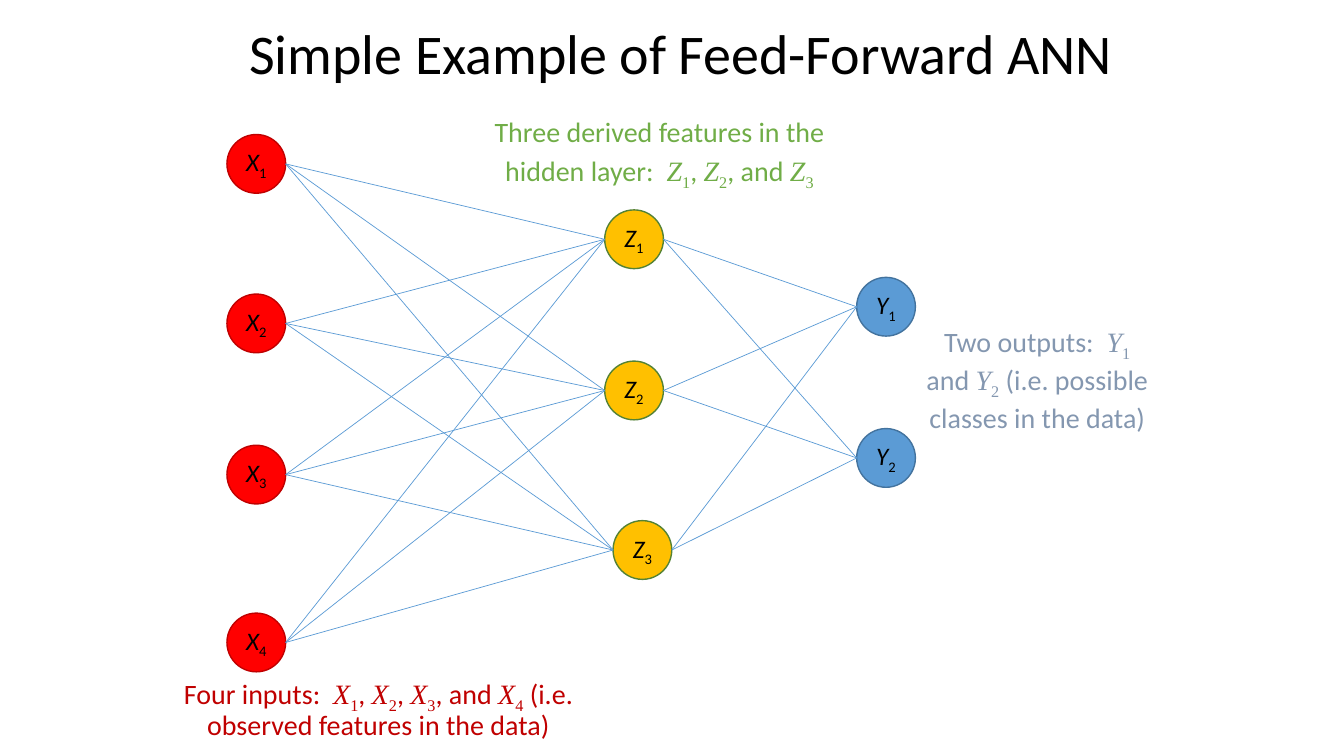
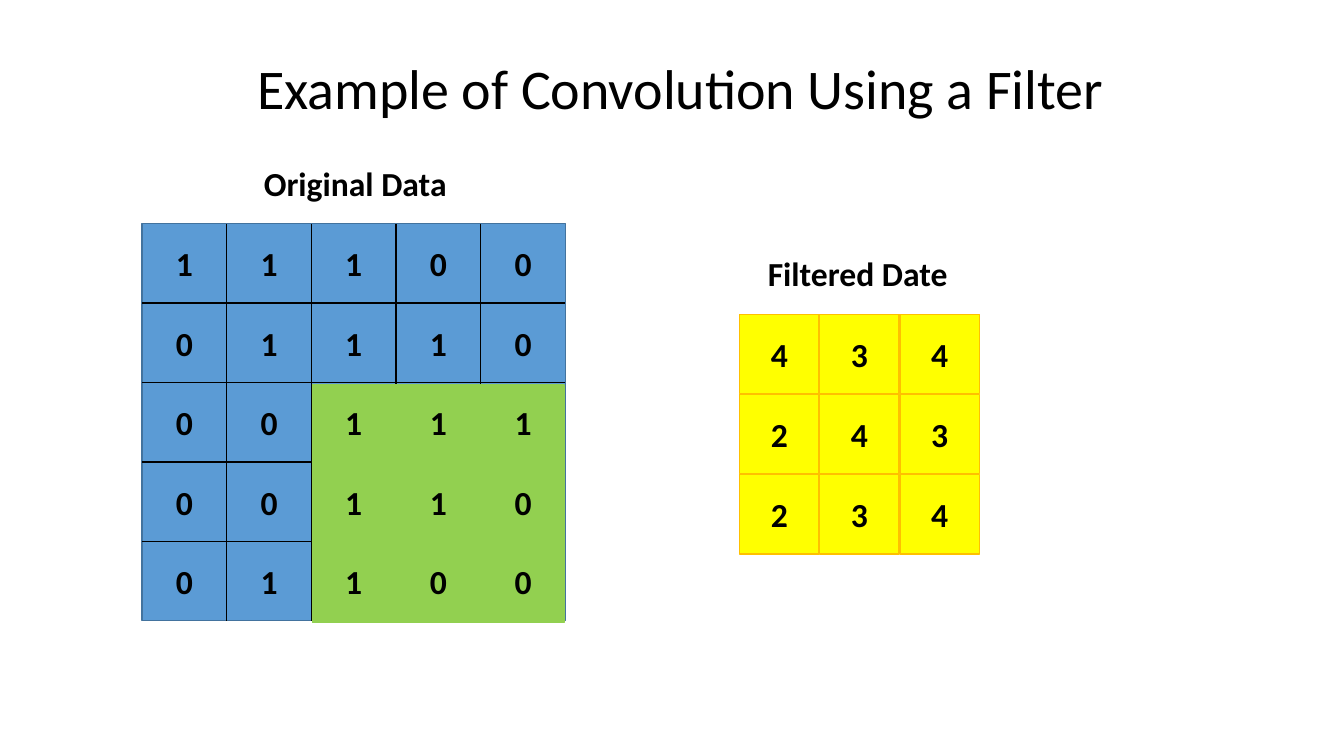
import itertools

import pptx
import pptx.dml.color
import pptx.enum.shapes
import pptx.enum.text
import pptx.oxml
import pptx.oxml.ns
import pptx.util

Cm = pptx.util.Cm
Pt = pptx.util.Pt
SHAPE = pptx.enum.shapes.MSO_SHAPE
ANCHOR = pptx.enum.text.MSO_ANCHOR

COLORS = {
    "black": "000000",
    "blue": "5B9BD5",
    "blue edge": "43739E",
    "red": "FF0000",
    "dark red": "C00000",
    "gold": "FFC000",
    "green edge": "548235",
    "green": "70AD47",
    "slate": "8497B0",
    "yellow": "FFFF00",
    "lime": "92D050",
}


def rgb(name):
    return pptx.dml.color.RGBColor.from_string(COLORS[name])


class Deck:
    """Shared style, and the slide being filled. Lengths are centimetres."""

    font = "Calibri"
    formula_font = "Times New Roman"

    def __init__(self):
        self.presentation = pptx.Presentation()
        self.presentation.slide_width = Cm(33.87)
        self.presentation.slide_height = Cm(19.05)
        self.slide = None

    def add_slide(self, title, left, top, width, height):
        layout = self.presentation.slide_layouts[6]
        self.slide = self.presentation.slides.add_slide(layout)
        self.text(left, top, width, height, [title], size=40,
                  anchor=ANCHOR.MIDDLE, line_spacing=0.9)

    def run(self, paragraph, text, size, color, font, bold=False):
        run = paragraph.add_run()
        run.text = text
        run.font.name = font
        run.font.size = Pt(size)
        run.font.bold = bold
        run.font.color.rgb = rgb(color)
        return run

    def fill_paragraph(self, paragraph, text, size, color, bold=False,
                       formula_font=formula_font):
        """Write text in which |X1| stands for italic X with subscript 1."""
        for index, piece in enumerate(text.split("|")):
            if index % 2:
                letter = self.run(paragraph, piece[0], size, color, formula_font)
                letter.font.italic = True
                subscript = self.run(paragraph, piece[1:], size, color, formula_font)
                subscript.font._element.set("baseline", "-25000")
            elif piece:
                self.run(paragraph, piece, size, color, self.font, bold)

    def text(self, left, top, width, height, lines, size=20, color="black",
             bold=False, centered=True, anchor=ANCHOR.TOP,
             line_spacing=None, space_before=0):
        box = self.slide.shapes.add_textbox(Cm(left), Cm(top), Cm(width), Cm(height))
        frame = box.text_frame
        frame.word_wrap = True
        frame.vertical_anchor = anchor
        for index, line in enumerate(lines):
            paragraph = frame.add_paragraph() if index else frame.paragraphs[0]
            if centered:
                paragraph.alignment = pptx.enum.text.PP_ALIGN.CENTER
            paragraph.line_spacing = line_spacing
            paragraph.space_before = Pt(space_before)
            self.fill_paragraph(paragraph, line, size, color, bold)

    def shape(self, kind, left, top, width, height, fill, edge,
              text="", size=24, bold=True):
        shape = self.slide.shapes.add_shape(
            kind, Cm(left), Cm(top), Cm(width), Cm(height))
        shape.shadow.inherit = False
        shape.fill.solid()
        shape.fill.fore_color.rgb = rgb(fill)
        shape.line.color.rgb = rgb(edge)
        shape.line.width = Pt(1)
        if text:
            frame = shape.text_frame
            frame.margin_left = frame.margin_right = 0
            frame.margin_top = frame.margin_bottom = 0
            frame.word_wrap = False
            frame.vertical_anchor = ANCHOR.MIDDLE
            paragraph = frame.paragraphs[0]
            paragraph.alignment = pptx.enum.text.PP_ALIGN.CENTER
            self.fill_paragraph(paragraph, text, size, "black", bold, self.font)

    def line(self, start, end, color, width):
        connector = self.slide.shapes.add_connector(
            pptx.enum.shapes.MSO_CONNECTOR.STRAIGHT,
            *(Cm(value) for value in (*start, *end)))
        connector.line.color.rgb = rgb(color)
        connector.line.width = Pt(width)
        properties = connector._element.spPr
        properties.append(pptx.oxml.parse_xml(
            "<a:effectLst %s/>" % pptx.oxml.ns.nsdecls("a")))


def add_network_slide(deck):
    deck.add_slide("Simple Example of Feed-Forward ANN", 5.72, 0.64, 22.86, 1.57)

    # Neurons: letter, fill, edge, (left, top) of each
    diameter = 1.48
    layers = [
        ("X", "red", "dark red",
         [(5.72, 3.39), (5.72, 7.41), (5.72, 11.22), (5.72, 15.45)]),
        ("Z", "gold", "green edge",
         [(15.24, 5.29), (15.24, 9.1), (15.45, 13.12)]),
        ("Y", "blue", "blue edge", [(21.59, 6.99), (21.59, 10.8)]),
    ]
    for letter, fill, edge, places in layers:
        for number, (left, top) in enumerate(places, 1):
            deck.shape(SHAPE.OVAL, left, top, diameter, diameter, fill, edge,
                       f"|{letter}{number}|", size=18)

    # Every neuron feeds every neuron of the next layer
    for (*_, sources), (*_, targets) in itertools.pairwise(layers):
        for source, target in itertools.product(sources, targets):
            deck.line((source[0] + diameter, source[1] + diameter / 2),
                      (target[0], target[1] + diameter / 2), "blue", 0.5)

    # Layer captions
    deck.text(4.24, 16.94, 10.59, 2.54,
              ["Four inputs:  |X1|, |X2|, |X3|, and |X4| (i.e. observed features in the data)"],
              color="dark red", line_spacing=0.9, space_before=10)
    deck.text(12.07, 2.75, 9.1, 2.54,
              ["Three derived features in the",
               "hidden layer:  |Z1|, |Z2|, and |Z3|"],
              color="green", space_before=4)
    deck.text(23.07, 8.05, 6.14, 3.81,
              ["Two outputs:  |Y1| and |Y2| (i.e. possible classes in the data)"],
              color="slate", space_before=4)


def add_convolution_slide(deck):
    deck.add_slide("Example of Convolution Using a Filter", 2.54, 0.46, 29.21, 3.68)

    # Original data: square, grid lines, filter window, digits
    data = ["11100", "01110", "00111", "00110", "01100"]
    left, top, width, height = 3.58, 5.64, 10.67, 10
    column_width, row_height = width / len(data[0]), height / len(data)
    deck.text(6.4, 3.99, 7.16, 1.27, ["Original Data"], size=24, bold=True,
              centered=False)
    deck.shape(SHAPE.RECTANGLE, left, top, width, height, "blue", "blue edge")
    for index in range(1, len(data)):
        x = left + index * column_width
        y = top + index * row_height
        deck.line((x, top), (x, top + height), "black", 1)
        deck.line((left, y), (left + width, y), "black", 1)
    deck.shape(SHAPE.RECTANGLE, 7.87, 9.7, 6.35, 5.99, "lime", "lime")
    for row, digits in enumerate(data):
        for column, digit in enumerate(digits):
            deck.text(left + column * column_width, top + row * row_height,
                      column_width, row_height, [digit], size=24, bold=True,
                      anchor=ANCHOR.MIDDLE)

    # Filtered data: one square per value
    pitch, side = 2.02, 2
    deck.text(19.1, 6.25, 7.16, 1.27, ["Filtered Date"], size=24, bold=True,
              centered=False)
    for row, digits in enumerate(["434", "243", "234"]):
        for column, digit in enumerate(digits):
            deck.shape(SHAPE.RECTANGLE, 18.64 + column * pitch, 7.92 + row * pitch,
                       side, side, "yellow", "gold", digit)


def main():
    deck = Deck()
    add_network_slide(deck)
    add_convolution_slide(deck)
    deck.presentation.save("out.pptx")


if __name__ == "__main__":
    main()
